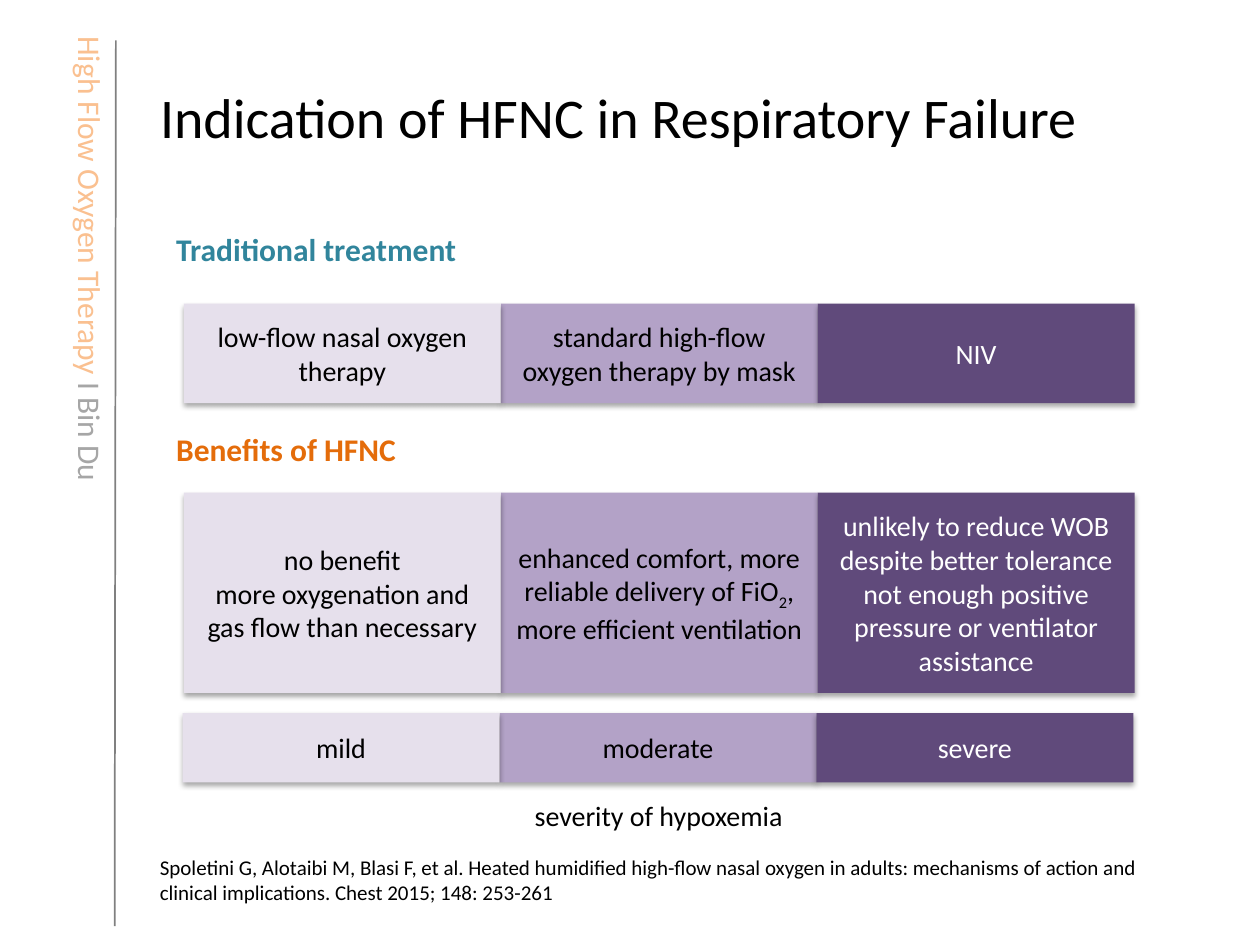
from lxml.etree import SubElement
from pptx import Presentation
from pptx.dml.color import RGBColor
from pptx.enum.shapes import MSO_CONNECTOR as Connector, MSO_SHAPE as Shape
from pptx.enum.text import MSO_ANCHOR as Anchor, MSO_AUTO_SIZE as AutoSize, PP_ALIGN as Align
from pptx.oxml.ns import qn
from pptx.util import Inches, Pt

BLACK = RGBColor(0x00, 0x00, 0x00)
WHITE = RGBColor(0xFF, 0xFF, 0xFF)
GRAY = RGBColor(0x80, 0x80, 0x80)
LIGHT_GRAY = RGBColor(0xA6, 0xA6, 0xA6)
PEACH = RGBColor(0xFA, 0xC0, 0x90)
TEAL = RGBColor(0x31, 0x85, 0x9C)
ORANGE = RGBColor(0xE4, 0x6C, 0x0A)
LAVENDER = RGBColor(0xE6, 0xE0, 0xEC)
LILAC = RGBColor(0xB3, 0xA2, 0xC7)
PURPLE = RGBColor(0x60, 0x4A, 0x7B)


class SeveritySlide:
    """Draws on one slide, with lengths in percent of the slide's width and height."""

    font = "Calibri"
    column_width = 25.15
    columns = [(LAVENDER, BLACK), (LILAC, BLACK), (PURPLE, WHITE)]
    drawing_order = (1, 0, 2)

    def __init__(self, deck):
        self.width, self.height = deck.slide_width, deck.slide_height
        self.slide = deck.slides.add_slide(deck.slide_layouts[5])

    def place(self, left, top, width, height):
        return (int(self.width * left / 100), int(self.height * top / 100),
                int(self.width * width / 100), int(self.height * height / 100))

    def fill_text(self, frame, text, size, color=BLACK, align=Align.LEFT, bold=False):
        frame.text = ""
        for index, line in enumerate(text.split("\n")):
            paragraph = frame.add_paragraph() if index else frame.paragraphs[0]
            paragraph.alignment = align
            for part in line.split("|"):
                run = paragraph.add_run()
                run.text = part
                run.font.name, run.font.size, run.font.bold = self.font, Pt(size), bold
                run.font.color.rgb = color

    def title(self, text, box):
        heading = self.slide.shapes.title
        heading.left, heading.top, heading.width, heading.height = self.place(*box)
        heading.text_frame.vertical_anchor = Anchor.MIDDLE
        self.fill_text(heading.text_frame, text, 32)

    def label(self, text, box, size, wrap=True, **style):
        caption = self.slide.shapes.add_textbox(*self.place(*box))
        caption.text_frame.word_wrap = wrap
        caption.text_frame.auto_size = AutoSize.SHAPE_TO_FIT_TEXT
        self.fill_text(caption.text_frame, text, size, **style)
        return caption

    def rule(self, start, end):
        line = self.slide.shapes.add_connector(
            Connector.STRAIGHT, *self.place(*start, *end))
        line.line.color.rgb, line.line.width = GRAY, Pt(1)
        SubElement(line._element.spPr, qn("a:effectLst"))

    def band(self, texts, left, top, height):
        panels = {}
        for column in self.drawing_order:
            fill, ink = self.columns[column]
            panel = self.slide.shapes.add_shape(Shape.RECTANGLE, *self.place(
                left + column * self.column_width, top, self.column_width, height))
            panel.fill.solid()
            panel.fill.fore_color.rgb = fill
            panel.line.fill.background()
            panel.text_frame.vertical_anchor = Anchor.MIDDLE
            self.fill_text(panel.text_frame, texts[column], 16, ink, Align.CENTER)
            panels[column] = panel
        return panels


def main():
    deck = Presentation()
    deck.slide_width, deck.slide_height = Inches(10), Inches(7.5)
    page = SeveritySlide(deck)

    page.rule((9.2, 4.27), (9.1, 98))
    running_head = page.label("High Flow Oxygen Therapy |Ι Bin Du", (-11.7, 25.07, 37.8, 5.33),
                              18, wrap=False, color=PEACH)
    running_head.rotation = 90
    running_head.text_frame.paragraphs[0].runs[1].font.color.rgb = LIGHT_GRAY

    page.title("Indication of HFNC in Respiratory Failure", (11.7, 4, 83.3, 16.67))
    page.label("Spoletini G, Alotaibi M, Blasi F, et al. Heated humidified high-flow nasal oxygen "
               "in adults: mechanisms of action and clinical implications. "
               "Chest 2015; 148: 253-261", (11.7, 89.73, 83.3, 6.67), 12)

    page.band(["mild", "moderate", "severe"], 14.5, 75.47, 7.33)
    page.label("severity of hypoxemia", (39.7, 83.87, 25.15, 4.93), 16, align=Align.CENTER)

    page.label("Traditional treatment", (13, 23.73, 25.1, 5.33), 18,
               wrap=False, color=TEAL, bold=True)
    page.band(["low-flow nasal oxygen therapy", "standard high-flow oxygen therapy by mask", "NIV"],
              14.6, 32.13, 10.53)

    page.label("Benefits of HFNC", (13, 44.8, 19.7, 5.33), 18,
               wrap=False, color=ORANGE, bold=True)
    benefits = page.band([
        "no benefit\nmore oxygenation and gas flow than necessary",
        "enhanced comfort, more reliable delivery of FiO|2|, more efficient ventilation",
        "unlikely to reduce WOB despite better tolerance\n"
        "not enough positive pressure or ventilator assistance",
    ], 14.6, 52.13, 21.2)
    subscript = benefits[1].text_frame.paragraphs[0].runs[1]
    subscript._r.get_or_add_rPr().set("baseline", "-25000")

    deck.save("out.pptx")


if __name__ == "__main__":
    main()
